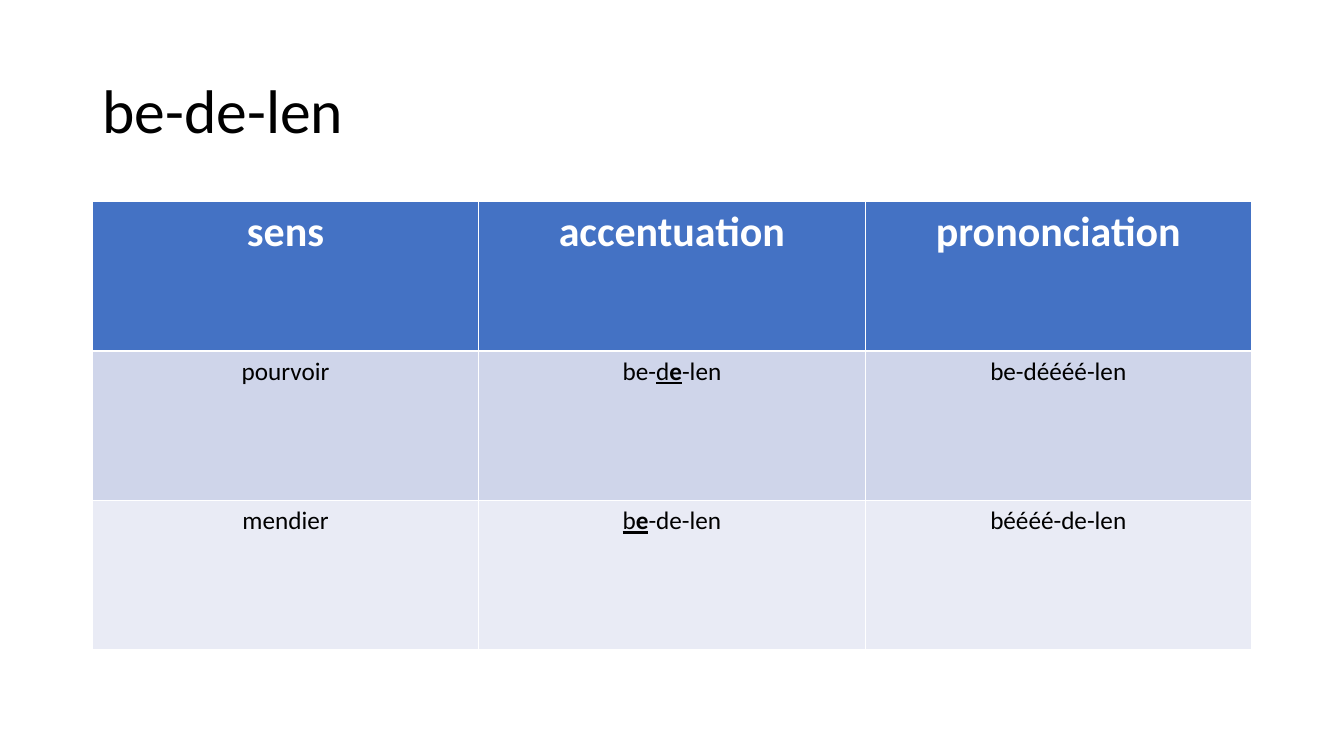
import pptx
import pptx.util
import pptx.dml.color
import pptx.enum.text

Pt = pptx.util.Pt
RGB = pptx.dml.color.RGBColor.from_string
ALIGN = pptx.enum.text.PP_ALIGN

HEADING = "be-de-len"
COLUMNS = ["sens", "accentuation", "prononciation"]
MEANINGS = [
    ("pourvoir", [("be-", ""), ("d", "u"), ("e", "bu"), ("-len", "")], "be-déééé-len"),
    ("mendier", [("b", "u"), ("e", "bu"), ("-de-len", "")], "béééé-de-len"),
]

THEME = {
    "font": "Calibri",
    "title_size": 44, "header_size": 30, "body_size": 18,
    "text": "000000", "header_text": "FFFFFF",
    "header_fill": "4472C4", "bands": ["CFD5EA", "E9EBF5"],
}

SLIDE_WIDTH, SLIDE_HEIGHT = 960, 540
MARGIN = 66
CONTENT_WIDTH = SLIDE_WIDTH - 2 * MARGIN
TITLE_TOP, TITLE_HEIGHT = 28.75, 104.4
TABLE_TOP, ROW_HEIGHT = 144, 106.8


def style_run(run, size, color, bold=False, underline=False):
    run.font.name = THEME["font"]
    run.font.size = Pt(size)
    run.font.color.rgb = RGB(color)
    run.font.bold = bold
    run.font.underline = underline


def fill_cell(cell, content, fill, size, color, bold=False):
    cell.fill.solid()
    cell.fill.fore_color.rgb = RGB(fill)
    paragraph = cell.text_frame.paragraphs[0]
    paragraph.alignment = ALIGN.CENTER
    parts = [(content, "b" if bold else "")] if isinstance(content, str) else content
    for text, marks in parts:
        run = paragraph.add_run()
        run.text = text
        style_run(run, size, color, "b" in marks, "u" in marks)


def add_heading(slide):
    heading = slide.shapes.title
    heading.left, heading.top = Pt(MARGIN), Pt(TITLE_TOP)
    heading.width, heading.height = Pt(CONTENT_WIDTH), Pt(TITLE_HEIGHT)
    heading.text_frame.text = HEADING
    heading.text_frame.vertical_anchor = pptx.enum.text.MSO_ANCHOR.MIDDLE
    paragraph = heading.text_frame.paragraphs[0]
    paragraph.alignment = ALIGN.LEFT
    paragraph.line_spacing = 0.9
    style_run(paragraph.runs[0], THEME["title_size"], THEME["text"])


def add_meanings(slide):
    row_count = len(MEANINGS) + 1
    meanings = slide.shapes.add_table(
        row_count, len(COLUMNS), Pt(MARGIN), Pt(TABLE_TOP),
        Pt(CONTENT_WIDTH), Pt(ROW_HEIGHT * row_count)).table
    for column, label in enumerate(COLUMNS):
        fill_cell(meanings.cell(0, column), label, THEME["header_fill"],
                  THEME["header_size"], THEME["header_text"], bold=True)
    for row, meaning in enumerate(MEANINGS, start=1):
        band = THEME["bands"][(row - 1) % len(THEME["bands"])]
        for column, content in enumerate(meaning):
            fill_cell(meanings.cell(row, column), content, band,
                      THEME["body_size"], THEME["text"])


def main():
    deck = pptx.Presentation()
    deck.slide_width, deck.slide_height = Pt(SLIDE_WIDTH), Pt(SLIDE_HEIGHT)
    slide = deck.slides.add_slide(deck.slide_layouts.get_by_name("Title Only"))
    add_heading(slide)
    add_meanings(slide)
    deck.save("out.pptx")


if __name__ == "__main__":
    main()
